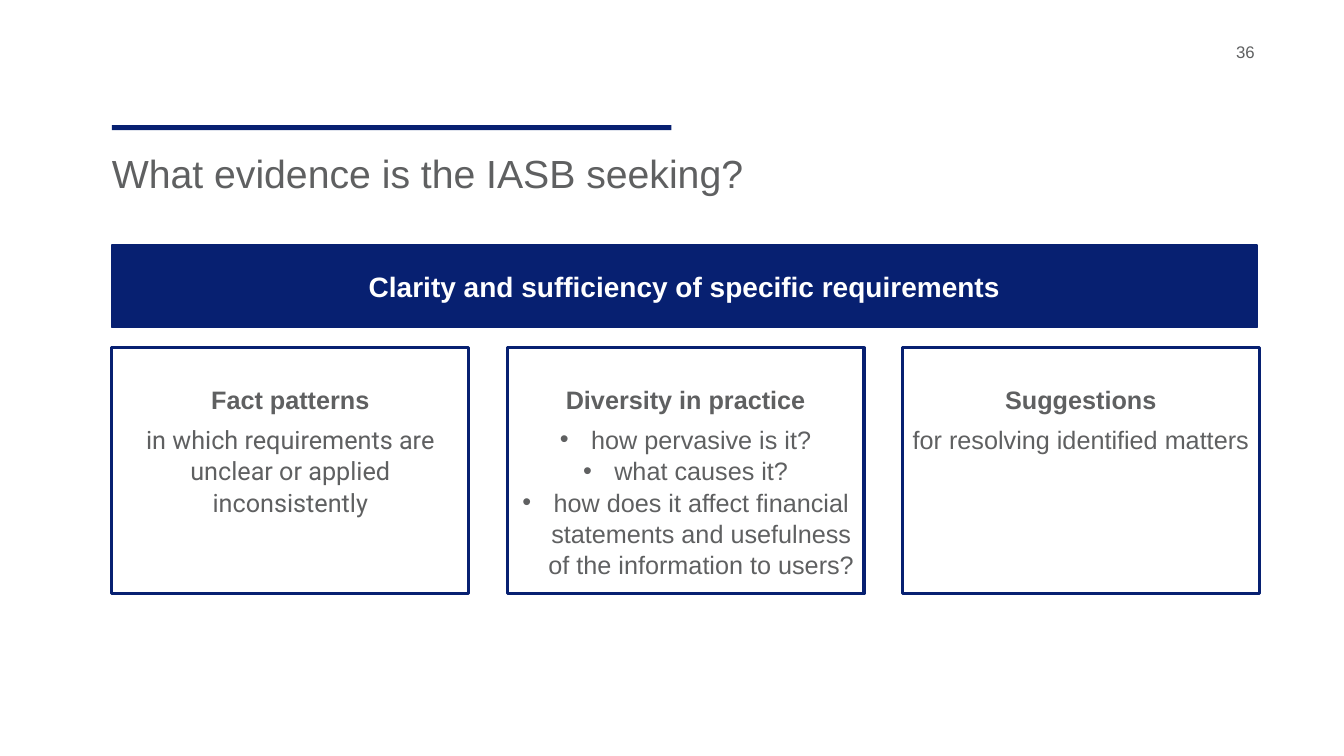
from dataclasses import dataclass

from lxml.etree import SubElement
from pptx import Presentation
from pptx.dml.color import RGBColor
from pptx.enum.shapes import MSO_SHAPE as Shape
from pptx.enum.text import MSO_ANCHOR as Anchor, PP_ALIGN as Align
from pptx.oxml.ns import qn
from pptx.util import Inches, Pt


@dataclass(frozen=True)
class Theme:
    navy: str = "072071"
    grey: str = "5F6061"
    white: str = "FFFFFF"
    font: str = "Arial"
    alternate_font: str = "Roboto"
    title_size: int = 28
    banner_size: int = 20
    body_size: int = 18
    number_size: int = 12


THEME = Theme()
CARDS = [
    ("Fact patterns",
     ["in which requirements are unclear or applied inconsistently"],
     {"font": THEME.alternate_font}),
    ("Diversity in practice",
     ["how pervasive is it?",
      "what causes it?",
      "how does it affect financial statements and usefulness "
      "of the information to users?"],
     {"bullet": "•"}),
    ("Suggestions", ["for resolving identified matters"], {}),
]


def add_bullet(paragraph, character, indent=0.31):
    properties = paragraph._p.get_or_add_pPr()
    properties.set("marL", str(Inches(indent)))
    properties.set("indent", str(-Inches(indent)))
    SubElement(properties, qn("a:buFont")).set("typeface", THEME.font)
    SubElement(properties, qn("a:buChar")).set("char", character)


def write(frame, text, *, size=THEME.body_size, color=THEME.grey, font=THEME.font,
          bold=False, align=Align.LEFT, space_after=0, line_spacing=None, bullet=None):
    """Fill the first paragraph of a frame, or append one if it has text."""
    paragraph = frame.add_paragraph() if frame.text else frame.paragraphs[0]
    paragraph.alignment = align
    paragraph.space_after = Pt(space_after)
    if line_spacing:
        paragraph.line_spacing = line_spacing
    if bullet:
        add_bullet(paragraph, bullet)
    run = paragraph.add_run()
    run.text = text
    run.font.name, run.font.size, run.font.bold = font, Pt(size), bold
    run.font.color.rgb = RGBColor.from_string(color)


def add_text_box(slide, box, text, **text_format):
    frame = slide.shapes.add_textbox(*map(Inches, box)).text_frame
    frame.word_wrap = True
    frame.margin_left = frame.margin_top = frame.margin_right = frame.margin_bottom = 0
    write(frame, text, **text_format)


def add_rectangle(slide, box, fill, line_width=0):
    shape = slide.shapes.add_shape(Shape.RECTANGLE, *map(Inches, box))
    shape.shadow.inherit = False
    shape.fill.solid()
    shape.fill.fore_color.rgb = RGBColor.from_string(fill)
    if line_width:
        shape.line.color.rgb = RGBColor.from_string(THEME.navy)
        shape.line.width = Pt(line_width)
    else:
        shape.line.fill.background()
    shape.text_frame.word_wrap = True
    return shape


def add_header(slide, left, top, width):
    # Accent rule, title and page number
    add_rectangle(slide, (left, top, 5.55, 0.05), THEME.navy)
    add_text_box(slide, (left, top + 0.24, width, 0.72),
                 "What evidence is the IASB seeking?", size=THEME.title_size)
    add_text_box(slide, (left + 11.15, top - 0.83, 0.67, 0.29), "36",
                 size=THEME.number_size)


def add_banner(slide, box):
    frame = add_rectangle(slide, box, THEME.navy, line_width=1).text_frame
    frame.vertical_anchor = Anchor.MIDDLE
    write(frame, "Clarity and sufficiency of specific requirements",
          size=THEME.banner_size, color=THEME.white, bold=True, align=Align.CENTER)


def add_card(slide, box, heading, lines, line_format):
    frame = add_rectangle(slide, box, THEME.white, line_width=2.25).text_frame
    frame.vertical_anchor = Anchor.TOP
    frame.margin_top = Inches(0.35)
    shared = {"align": Align.CENTER, "line_spacing": 1.04}
    write(frame, heading, bold=True, space_after=6, **shared)
    for line in lines:
        write(frame, line, **shared, **line_format)


def add_cards(slide, left, top, card_width=3.54, height=2.44, gap=0.38):
    for index, card in enumerate(CARDS):
        card_left = left + index * (card_width + gap)
        add_card(slide, (card_left, top, card_width, height), *card)


def main():
    presentation = Presentation()
    presentation.slide_width = Inches(13.33)
    presentation.slide_height = Inches(7.5)
    slide = presentation.slides.add_slide(presentation.slide_layouts[6])

    left = 1.11
    add_header(slide, left, 1.24, 11.61)
    add_banner(slide, (left, 2.43, 11.36, 0.82))
    add_cards(slide, left, 3.45)
    presentation.save("out.pptx")


if __name__ == "__main__":
    main()
